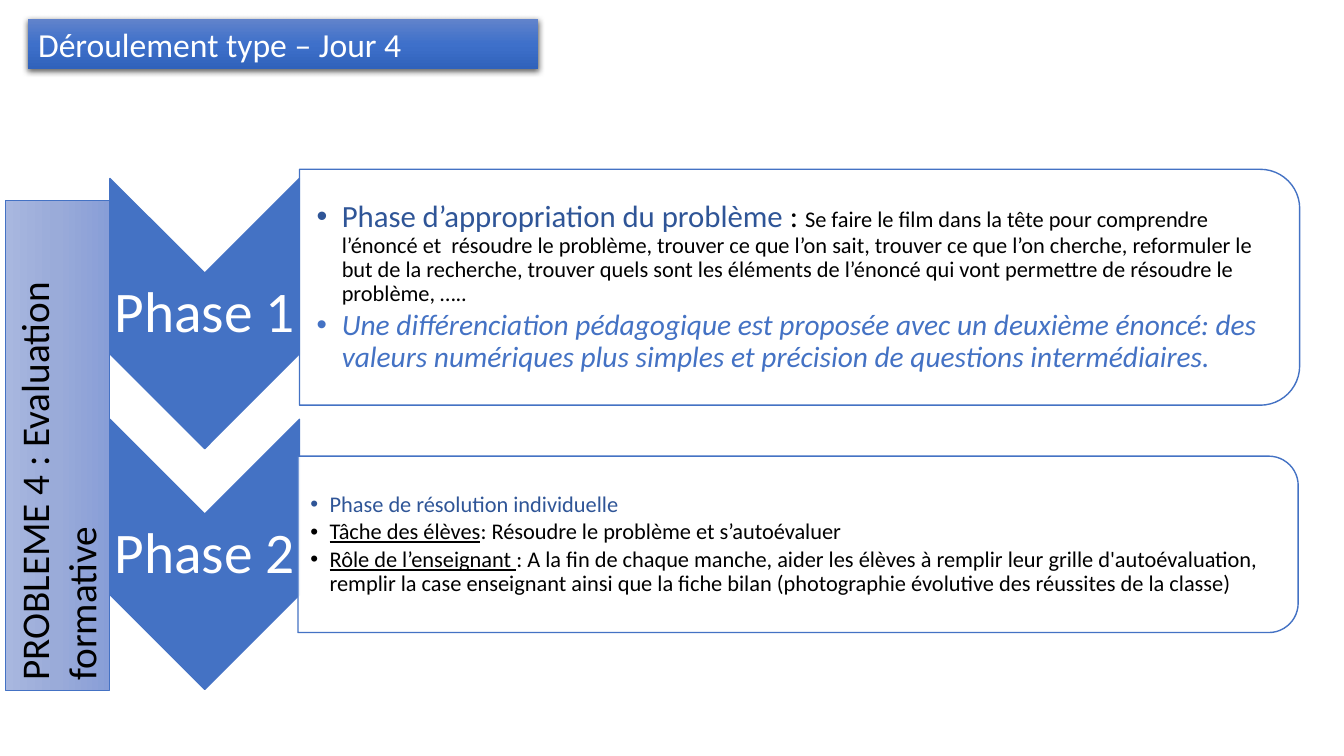
from copy import deepcopy
from dataclasses import dataclass

from lxml.etree import SubElement
from pptx import Presentation
from pptx.dml.color import RGBColor
from pptx.enum.shapes import MSO_SHAPE
from pptx.enum.text import MSO_ANCHOR, MSO_AUTO_SIZE, PP_ALIGN
from pptx.oxml import parse_xml
from pptx.oxml.ns import nsdecls, qn
from pptx.util import Inches, Pt


@dataclass(frozen=True)
class Theme:
    font: str = "Calibri"
    blue: str = "4472C4"
    dark_blue: str = "2F5597"
    black: str = "000000"
    white: str = "FFFFFF"
    label_gradient: tuple = ("A8B7DF", "9AABD9", "889ED7")
    title_gradient: tuple = ("6183CB", "3E70CA", "3062BB")
    phase_size: int = 41
    label_size: int = 28
    title_size: int = 24
    heading_size: int = 22
    note_size: int = 21
    body_size: int = 16


theme = Theme()


def add_block(preset, box, fill, line_width, rotation=0):
    """Add a shape; fill is one colour or a tuple of three gradient colours."""
    block = slide.shapes.add_shape(preset, *map(Inches, box))
    block.rotation = rotation
    block.shadow.inherit = False
    if isinstance(fill, tuple):
        block.fill.gradient()
        block.fill.gradient_angle = 270
        stops = block._element.spPr.find(qn("a:gradFill")).find(qn("a:gsLst"))
        stops.insert(1, deepcopy(stops[0]))
        for stop, colour, position in zip(block.fill.gradient_stops, fill, (0, 0.5, 1)):
            stop.color.rgb = RGBColor.from_string(colour)
            stop.position = position
    else:
        block.fill.solid()
        block.fill.fore_color.rgb = RGBColor.from_string(fill)
    if line_width:
        block.line.color.rgb = RGBColor.from_string(theme.blue)
        block.line.width = Pt(line_width)
    else:
        block.line.fill.background()
    return block


def write_paragraphs(frame, paragraphs, align=PP_ALIGN.LEFT, spacing=None):
    """Fill a frame with paragraphs of (text, size, colour, font formats) runs."""
    frame.word_wrap = True
    for index, runs in enumerate(paragraphs):
        paragraph = frame.add_paragraph() if index else frame.paragraphs[0]
        paragraph.alignment = align
        paragraph.line_spacing = spacing
        for text, size, colour, formats in runs:
            run = paragraph.add_run()
            run.text = text
            run.font.color.rgb = RGBColor.from_string(colour)
            for name, value in {"name": theme.font, "size": Pt(size), **formats}.items():
                setattr(run.font, name, value)


presentation = Presentation()
presentation.slide_width = Inches(13.33)
presentation.slide_height = Inches(7.5)
slide = presentation.slides.add_slide(presentation.slide_layouts[6])

appropriation = [
    [
        ("Phase d’appropriation du problème ", theme.heading_size, theme.dark_blue, {}),
        (": ", theme.heading_size, theme.black, {}),
        ("Se faire le film dans la tête pour comprendre l’énoncé et  résoudre le problème, "
         "trouver ce que l’on sait, trouver ce que l’on cherche, reformuler le but de la "
         "recherche, trouver quels sont les éléments de l’énoncé qui vont permettre de "
         "résoudre le problème, …..", theme.body_size, theme.black, {}),
    ],
    [
        ("Une différenciation pédagogique est proposée avec un deuxième énoncé: des valeurs "
         "numériques plus simples et précision de questions intermédiaires.",
         theme.note_size, theme.blue, {"italic": True}),
    ],
]
resolution = [
    [("Phase de résolution individuelle", theme.body_size, theme.dark_blue, {})],
    [
        ("Tâche des élèves", theme.body_size, theme.black, {"underline": True}),
        (": Résoudre le problème et s’autoévaluer", theme.body_size, theme.black, {}),
    ],
    [
        ("Rôle de l’enseignant ", theme.body_size, theme.black, {"underline": True}),
        (": A la fin de chaque manche, aider les élèves à remplir leur grille "
         "d'autoévaluation, remplir la case enseignant ainsi que la fiche bilan "
         "(photographie évolutive des réussites de la classe)",
         theme.body_size, theme.black, {}),
    ],
]

# Each phase: panel box before its quarter turn, text box, left inset,
# other insets, bullet indent, space after in points, content
phases = [
    ((6.76, -2.11, 2.34, 9.92), (2.97, 1.79, 9.8, 2.12), 0.17, 0.02, 0.25, 3, appropriation),
    ((7.04, 0.44, 1.75, 9.92), (2.96, 4.62, 9.83, 1.57), 0.12, 0.01, 0.19, 2.4, resolution),
]
phase_pitch = 2.39

for index, (panel_box, text_box, left_inset, inset, indent, gap, content) in enumerate(phases):
    drop = index * phase_pitch
    add_block(MSO_SHAPE.CHEVRON, (0.69, 2.17 + drop, 2.68, 1.88), theme.blue, 1, 90)
    phase_name = slide.shapes.add_textbox(*map(Inches, (1.09, 2.71 + drop, 1.88, 0.81))).text_frame
    panel = add_block(MSO_SHAPE.ROUND_2_SAME_RECTANGLE, panel_box, theme.white, 1, 90)
    panel_colour = panel._element.spPr.find(qn("a:solidFill"))[0]
    SubElement(panel_colour, qn("a:alpha"), val="90000")
    details = slide.shapes.add_textbox(*map(Inches, text_box)).text_frame

    for frame, left, other in ((phase_name, 0.03, 0.03), (details, left_inset, inset)):
        frame.vertical_anchor = MSO_ANCHOR.MIDDLE
        frame.margin_left = Inches(left)
        frame.margin_top = frame.margin_right = frame.margin_bottom = Inches(other)

    phase_run = (f"Phase {index + 1}", theme.phase_size, theme.white, {})
    write_paragraphs(phase_name, [[phase_run]], PP_ALIGN.CENTER, 0.9)
    write_paragraphs(details, content, spacing=0.9)
    for paragraph in details.paragraphs:
        paragraph.level = 1
        paragraph.space_after = Pt(gap)
        properties = paragraph._p.get_or_add_pPr()
        properties.set("marL", str(Inches(indent)))
        properties.set("indent", str(-Inches(indent)))
        SubElement(properties, qn("a:buFont"), typeface="Arial")
        SubElement(properties, qn("a:buChar"), char="•")

problem_label = add_block(
    MSO_SHAPE.RECTANGLE, (-1.86, 3.9, 4.86, 1.04), theme.label_gradient, 0.5, 270)
title = add_block(MSO_SHAPE.RECTANGLE, (0.28, 0.19, 5.06, 0.5), theme.title_gradient, 0)
for banner, text, size, colour in (
    (problem_label, "PROBLEME 4 : Evaluation formative", theme.label_size, theme.black),
    (title, "Déroulement type – Jour 4", theme.title_size, theme.white),
):
    write_paragraphs(banner.text_frame, [[(text, size, colour, {})]])
    banner.text_frame.vertical_anchor = MSO_ANCHOR.TOP
    banner.text_frame.auto_size = MSO_AUTO_SIZE.SHAPE_TO_FIT_TEXT

title_effects = title._element.spPr.find(qn("a:effectLst"))
title_effects.append(parse_xml(
    f'<a:outerShdw {nsdecls("a")} blurRad="{Pt(4.5)}" dist="{Pt(1.5)}" dir="5400000" '
    f'algn="ctr" rotWithShape="0"><a:srgbClr val="{theme.black}">'
    '<a:alpha val="63000"/></a:srgbClr></a:outerShdw>'))

presentation.save("out.pptx")
